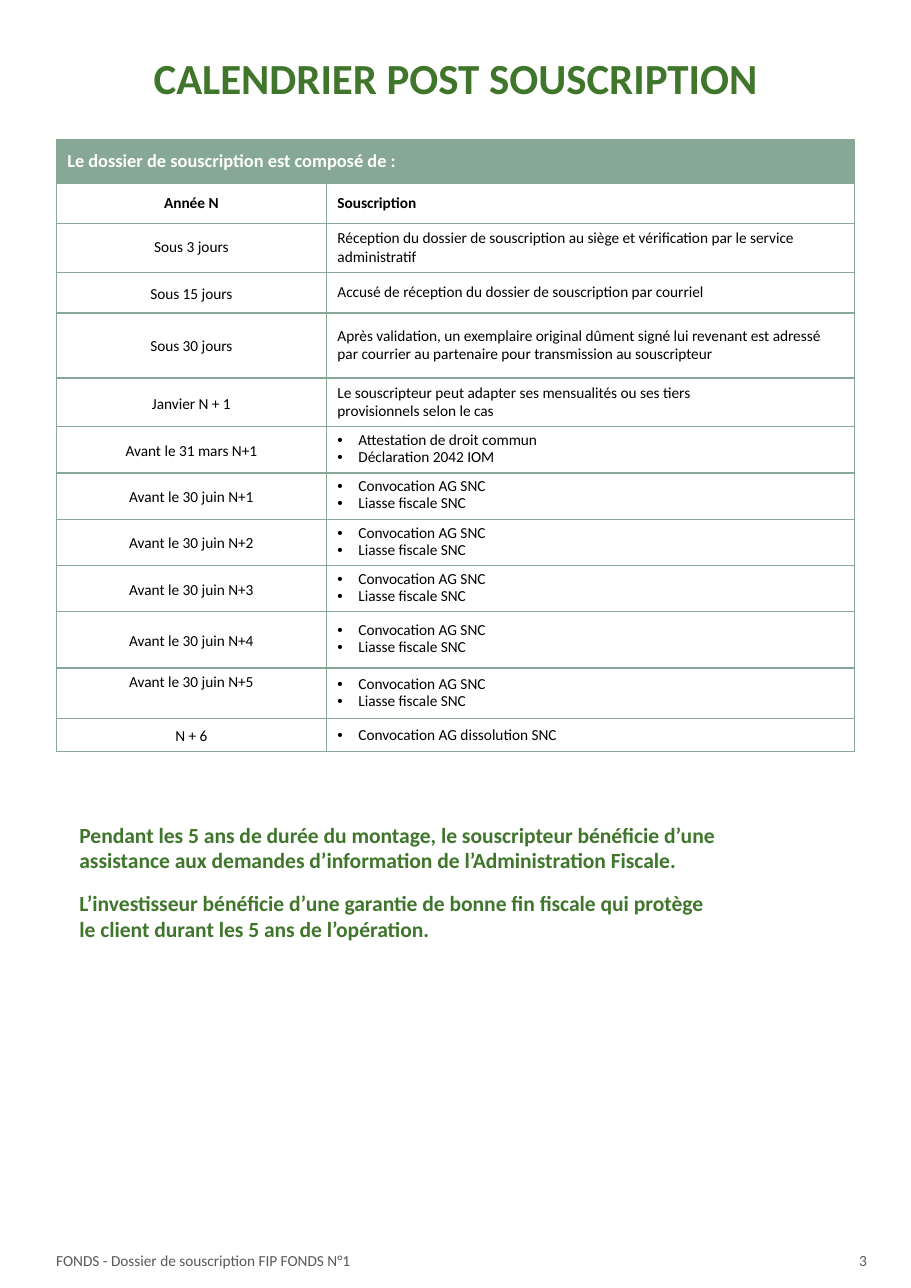
import lxml.etree
import pptx
import pptx.dml.color
import pptx.enum.text
import pptx.oxml.ns
import pptx.util

Inches = pptx.util.Inches
Pt = pptx.util.Pt
qn = pptx.oxml.ns.qn
ALIGN = pptx.enum.text.PP_ALIGN
ANCHOR = pptx.enum.text.MSO_ANCHOR

COLORS = {
    "green": "3F762B",
    "sage": "87A896",
    "white": "FFFEFF",
    "black": "000000",
    "grey": "595959",
}
FONT = "Calibri"
YEARLY_ITEMS = ["Convocation AG SNC", "Liasse fiscale SNC"]

# Row height, deadline, its line spacing, step (a list is bulleted), its line spacing
CALENDAR = [
    (0.37, "Année N", None, "Souscription", None),
    (0.44, "Sous 3 jours", 11,
     "Réception du dossier de souscription au siège et vérification par le service administratif", 12),
    (0.37, "Sous 15 jours", 13.8,
     "Accusé de réception du dossier de souscription par courriel", 11.5),
    (0.59, "Sous 30 jours", 13.2,
     "Après validation, un exemplaire original dûment signé lui revenant est adressé "
     "par courrier au partenaire pour transmission au souscripteur", 11.5),
    (0.44, "Janvier N + 1", 14,
     "Le souscripteur peut adapter ses mensualités ou ses tiers\nprovisionnels selon le cas", 12),
    (0.42, "Avant le 31 mars N+1", 14,
     ["Attestation de droit commun", "Déclaration 2042 IOM"], 11),
    (0.42, "Avant le 30 juin N+1", 14, YEARLY_ITEMS, 11),
    (0.42, "Avant le 30 juin N+2", 14, YEARLY_ITEMS, 11),
    (0.42, "Avant le 30 juin N+3", 14, YEARLY_ITEMS, 11),
    (0.51, "Avant le 30 juin N+4", 14, YEARLY_ITEMS, 11),
    (0.46, "Avant le 30 juin N+5", None, YEARLY_ITEMS, 11),
    (0.3, "N + 6", 13.8, ["Convocation AG dissolution SNC"], None),
]
HEADING_HEIGHT = 0.39
TOP_ANCHORED = "Avant le 30 juin N+5"


def rgb(name):
    return pptx.dml.color.RGBColor.from_string(COLORS[name])


def write_paragraph(para, text, size, color, bold=False, align=ALIGN.LEFT, spacing=None):
    para.text = text
    para.alignment = align
    if spacing:
        para.line_spacing = Pt(spacing)
    for span in para.runs:
        span.font.name = FONT
        span.font.size = Pt(size)
        span.font.bold = bold
        span.font.color.rgb = rgb(color)


def add_bullet(para):
    properties = para._p.get_or_add_pPr()
    properties.set("marL", str(Inches(0.19)))
    properties.set("indent", str(Inches(-0.19)))
    lxml.etree.SubElement(properties, qn("a:buFont"), typeface="Arial")
    lxml.etree.SubElement(properties, qn("a:buChar"), char="•")


def add_text(page, left, top, width, height, text, size, color, **style):
    box = page.shapes.add_textbox(Inches(left), Inches(top), Inches(width), Inches(height))
    frame = box.text_frame
    frame.margin_left = frame.margin_right = frame.margin_top = frame.margin_bottom = 0
    frame.word_wrap = False
    frame.auto_size = pptx.enum.text.MSO_AUTO_SIZE.SHAPE_TO_FIT_TEXT
    write_paragraph(frame.paragraphs[0], text, size, color, **style)


def add_borders(cell):
    properties = cell._tc.get_or_add_tcPr()
    for side in ("a:lnL", "a:lnR", "a:lnT", "a:lnB"):
        line = lxml.etree.SubElement(properties, qn(side), w=str(Pt(1)))
        fill = lxml.etree.SubElement(line, qn("a:solidFill"))
        lxml.etree.SubElement(fill, qn("a:srgbClr"), val=COLORS["sage"])


def prepare_cell(cell, fill=None):
    """Give the cell its borders, anchor and fill."""
    add_borders(cell)
    cell.vertical_anchor = ANCHOR.MIDDLE
    if fill:
        cell.fill.solid()
        cell.fill.fore_color.rgb = rgb(fill)
    else:
        cell.fill.background()


def fill_step(cell, step, bold, spacing):
    bulleted = isinstance(step, list)
    frame = cell.text_frame
    for index, text in enumerate(step if bulleted else [step]):
        para = frame.add_paragraph() if index else frame.paragraphs[0]
        if bulleted:
            add_bullet(para)
        write_paragraph(para, text, 10, "black", bold=bold, spacing=spacing)


def add_calendar(page):
    heights = [HEADING_HEIGHT] + [row[0] for row in CALENDAR]
    table = page.shapes.add_table(
        len(heights), 2, Inches(0.51), Inches(1.27), Inches(7.24), Inches(sum(heights))
    ).table
    table.horz_banding = False
    table.first_row = False
    for column, width in zip(table.columns, (2.45, 4.79)):
        column.width = Inches(width)
    for row, height in zip(table.rows, heights):
        row.height = Inches(height)

    for column in range(2):
        prepare_cell(table.cell(0, column), "sage")
    heading = table.cell(0, 0)
    heading.merge(table.cell(0, 1))
    write_paragraph(heading.text_frame.paragraphs[0],
                    "Le dossier de souscription est composé de :",
                    12, "white", bold=True, spacing=13.8)

    for index, (_, deadline, deadline_spacing, step, step_spacing) in enumerate(CALENDAR, 1):
        bold = index == 1
        left, right = table.cell(index, 0), table.cell(index, 1)
        prepare_cell(left)
        prepare_cell(right)
        if deadline == TOP_ANCHORED:
            left.vertical_anchor = ANCHOR.TOP
        write_paragraph(left.text_frame.paragraphs[0], deadline, 10, "black",
                        bold=bold, align=ALIGN.CENTER, spacing=deadline_spacing)
        fill_step(right, step, bold, step_spacing)


def main():
    deck = pptx.Presentation()
    deck.slide_width = Inches(8.26)
    deck.slide_height = Inches(11.68)
    page = deck.slides.add_slide(deck.slide_layouts[6])

    add_text(page, 0.95, 0.55, 6.36, 0.4, "CALENDRIER POST SOUSCRIPTION",
             28, "green", bold=True, align=ALIGN.CENTER, spacing=27.6)
    add_text(page, 0.72, 7.47, 6.13, 0.67,
             "Pendant les 5 ans de durée du montage, le souscripteur bénéficie d’une\n"
             "assistance aux demandes d’information de l’Administration Fiscale.",
             14.1, "green", bold=True, spacing=16)
    add_text(page, 0.72, 8.07, 6.04, 0.71,
             "L’investisseur bénéficie d’une garantie de bonne fin fiscale qui protège\n"
             "le client durant les 5 ans de l’opération.",
             14.1, "green", bold=True, spacing=17)
    add_calendar(page)
    add_text(page, 0.51, 11.35, 2.95, 0.17,
             "FONDS - Dossier de souscription FIP FONDS N°1", 10, "grey", spacing=11.5)
    add_text(page, 7.79, 11.35, 0.08, 0.17, "3", 10.1, "grey", spacing=11.5)

    deck.save("out.pptx")


if __name__ == "__main__":
    main()
